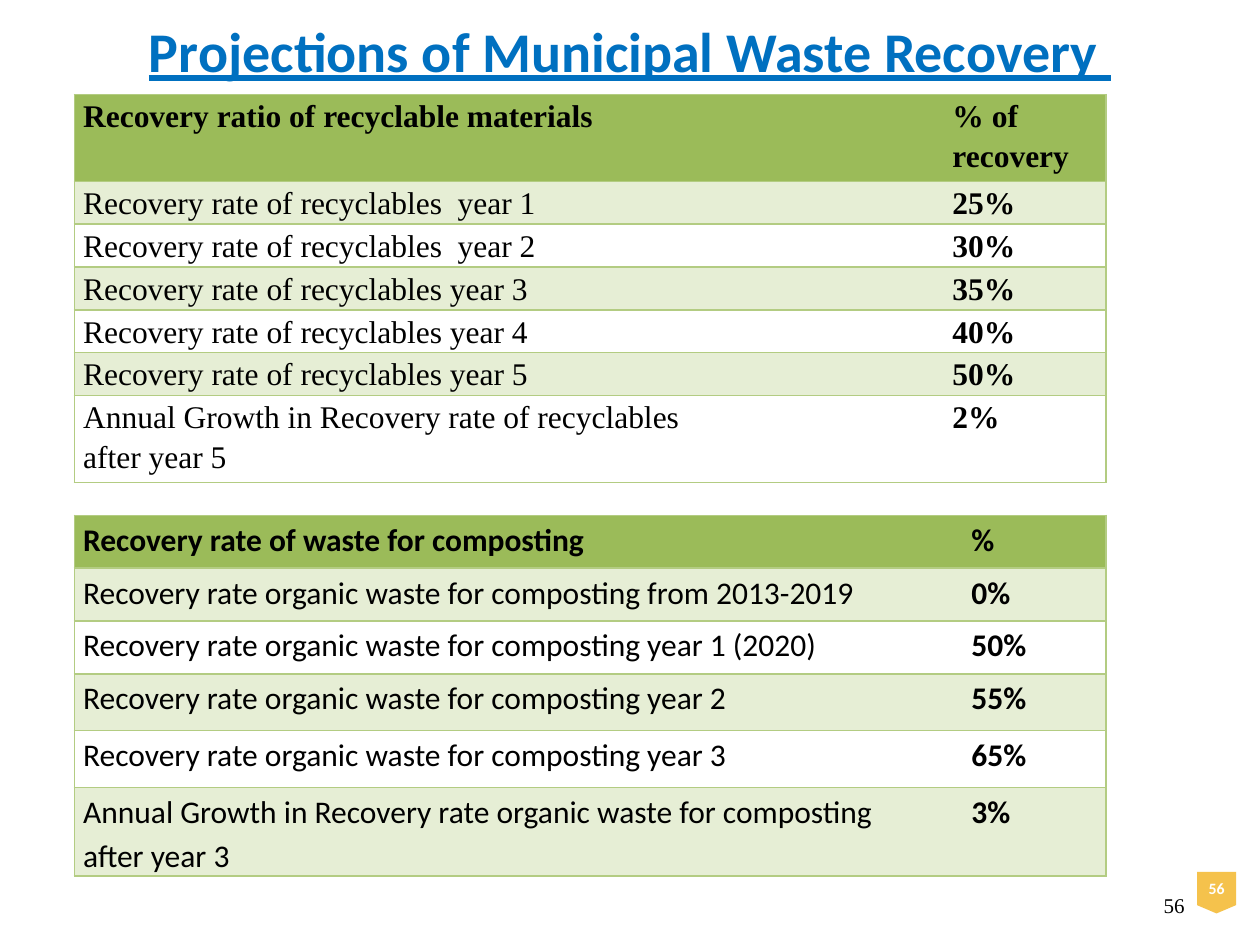
from pptx import Presentation
from pptx.dml.color import RGBColor
from pptx.enum.shapes import MSO_SHAPE as SHAPE
from pptx.enum.text import MSO_ANCHOR as ANCHOR, PP_ALIGN as ALIGN
from pptx.oxml.ns import qn
from pptx.util import Inches, Pt
from lxml import etree

GREEN, PALE, EDGE, WHITE = "9BBB59", "E6EED5", "B3CC82", "FFFFFF"


def rgb(value):
    return RGBColor.from_string(value)


def style_text(tf, text, font, size, color, bold=False, align=ALIGN.LEFT):
    tf.word_wrap = True
    p = tf.paragraphs[0]
    p.text = text
    p.alignment = align
    p.font.name, p.font.size, p.font.bold = font, Pt(size), bold
    p.font.color.rgb = rgb(color)
    return p


prs = Presentation()
prs.slide_width, prs.slide_height = Inches(10), Inches(7.5)
s = prs.slides.add_slide(prs.slide_layouts[6])

# Footer band, page badge and title box
boxes = []
for kind, box, fill in [
    (SHAPE.RECTANGLE, (0, 6.61, 10, 0.9), WHITE),
    (SHAPE.FLOWCHART_OFFPAGE_CONNECTOR, (9.5, 6.92, 0.31, 0.33), "F5C24C"),
    (SHAPE.RECTANGLE, (0.5, 0.08, 9, 0.63), WHITE),
]:
    sp = s.shapes.add_shape(kind, *map(Inches, box))
    sp.shadow.inherit = False
    sp.fill.solid()
    sp.fill.fore_color.rgb = rgb(fill)
    sp.line.fill.background()
    boxes.append(sp)
band, badge, title = boxes
band.line.color.rgb = rgb(WHITE)
band.line.width = Pt(1)

tf = badge.text_frame
tf.margin_left = tf.margin_right = Inches(0.07)
tf.margin_top = tf.margin_bottom = Inches(0.04)
tf.vertical_anchor = ANCHOR.MIDDLE
style_text(tf, "56", "Calibri", 9, WHITE, True, ALIGN.CENTER)

tf = title.text_frame
tf.vertical_anchor = ANCHOR.TOP
p = style_text(tf, "Projections of Municipal Waste Recovery ", "Calibri", 32,
               "0070C0", True, ALIGN.CENTER)
p.font.underline = True

# Tables: top, font, space after, merged rows, column widths, row heights, content
recycling = [
    ("Recovery ratio of recyclable materials", "% of recovery"),
    ("Recovery rate of recyclables  year 1", "25%"),
    ("Recovery rate of recyclables  year 2", "30%"),
    ("Recovery rate of recyclables year 3", "35%"),
    ("Recovery rate of recyclables year 4", "40%"),
    ("Recovery rate of recyclables year 5", "50%"),
    ("Annual Growth in Recovery rate of recyclables after year 5", "2%"),
]
composting = [
    ("Recovery rate of waste for composting", "%"),
    ("Recovery rate organic waste for composting from 2013-2019", "0%"),
    ("Recovery rate organic waste for composting year 1 (2020)", "50%"),
    ("Recovery rate organic waste for composting year 2", "55%"),
    ("Recovery rate organic waste for composting year 3", "65%"),
    ("Annual Growth in Recovery rate organic waste for composting after year 3", "3%"),
]
for top, font, after, merged, widths, heights, rows in [
    (0.75, "Times New Roman", 0, 0, [5.27, 0.48, 1.15, 1.29],
     [0.69] + [0.34] * 5 + [0.69], recycling),
    (4.09, "Calibri", 6, 3, [6.74, 0.31, 1.14],
     [0.42] * 3 + [0.45] * 2 + [0.69], composting),
]:
    last = len(widths) - 1
    tbl = s.shapes.add_table(len(rows), len(widths), Inches(0.59), Inches(top),
                             Inches(sum(widths)), Inches(sum(heights))).table
    for col, width in zip(tbl.columns, widths):
        col.width = Inches(width)
    for i, (label, value) in enumerate(rows):
        tbl.rows[i].height = Inches(heights[i])
        for j in range(last + 1):
            cell = tbl.cell(i, j)
            cell.margin_left = cell.margin_right = Inches(0.07)
            cell.margin_top = cell.margin_bottom = 0
            # Lines around the rows, none between columns
            tcPr = cell._tc.get_or_add_tcPr()
            for side, shown in [("L", j == 0), ("R", j == last), ("T", True), ("B", True)]:
                ln = etree.SubElement(tcPr, qn("a:ln" + side), w=str(Pt(1)))
                if shown:
                    fill = etree.SubElement(ln, qn("a:solidFill"))
                    etree.SubElement(fill, qn("a:srgbClr"), val=EDGE)
                else:
                    etree.SubElement(ln, qn("a:noFill"))
            # Header, then alternating bands
            if i == 0 or i % 2:
                cell.fill.solid()
                cell.fill.fore_color.rgb = rgb(PALE if i else GREEN)
            else:
                cell.fill.background()
            if j in (0, last):
                p = style_text(cell.text_frame, value if j else label, font, 18,
                               "000000", i == 0 or j == last)
                p.line_spacing = 1.15
                p.space_after = Pt(after)
        if i < merged:
            tbl.cell(i, 0).merge(tbl.cell(i, 1))

# Slide number
tf = s.shapes.add_textbox(Inches(7.17), Inches(6.83), Inches(2.33), Inches(0.5)).text_frame
tf.vertical_anchor = ANCHOR.BOTTOM
style_text(tf, "56", "Times New Roman", 12, "000000", align=ALIGN.RIGHT)

prs.save("out.pptx")
